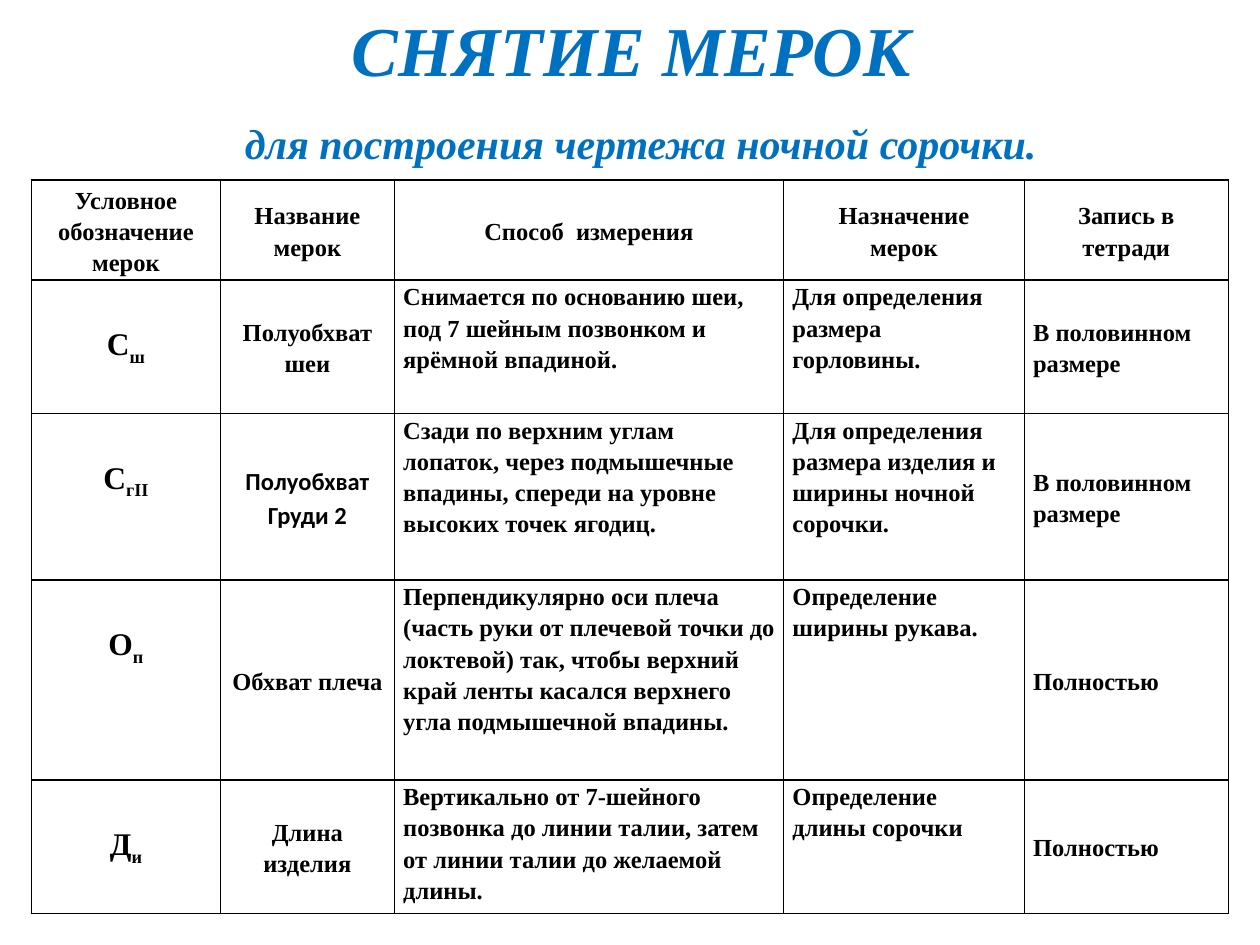
from dataclasses import dataclass

import pptx
import pptx.dml.color
import pptx.enum.text
import pptx.oxml
import pptx.oxml.ns
import pptx.util

RGBColor = pptx.dml.color.RGBColor
Inches = pptx.util.Inches
Pt = pptx.util.Pt
Align = pptx.enum.text.PP_ALIGN
Anchor = pptx.enum.text.MSO_ANCHOR

BLUE = RGBColor(0x00, 0x70, 0xC0)
BLACK = RGBColor(0, 0, 0)
SERIF = "Times New Roman"
WIDTH, HEIGHT = Inches(10), Inches(7.5)
COLS = (0.15, 0.138, 0.309, 0.191, 0.162)  # shares of the slide's width
ROWS = (3, 4, 5, 6, 4)  # grid units
UNIT = Inches(5.82) // sum(ROWS)


@dataclass
class Measure:
    sign: str
    index: str
    name: str
    method: str
    aim: str
    note: str
    face: str = SERIF


HEADS = ("Условное\nобозначение\nмерок", "Название\nмерок", "Способ  измерения",
         "Назначение\nмерок", "Запись в тетради")
MEASURES = (
    Measure("С", "ш", "Полуобхват\nшеи",
            "Снимается по основанию шеи, под 7 шейным позвонком и ярёмной впадиной.",
            "Для определения размера горловины.", "В половинном размере"),
    Measure("С", "гII", "Полуобхват\nГруди 2",
            "Сзади по верхним углам лопаток, через подмышечные впадины, "
            "спереди на уровне высоких точек ягодиц.",
            "Для определения размера изделия и ширины ночной сорочки.",
            "В половинном размере", "Calibri"),
    Measure("О", "п", "Обхват плеча",
            "Перпендикулярно оси плеча (часть руки от плечевой точки до локтевой) так, "
            "чтобы верхний край ленты касался верхнего угла подмышечной впадины.",
            "Определение ширины рукава.", "Полностью"),
    Measure("Д", "и", "Длина изделия",
            "Вертикально от 7-шейного позвонка до линии талии, "
            "затем от линии талии до желаемой длины.",
            "Определение длины сорочки", "Полностью"),
)


def style(font, size: float, color: RGBColor, face: str = SERIF,
          italic: bool = False) -> None:
    font.name, font.size, font.bold, font.italic = face, Pt(size), True, italic
    font.color.rgb = color


def place(shape, left: float, top: float, width: float, height: float) -> None:
    """Set the frame from shares of the slide's size."""
    shape.left, shape.width = int(left * WIDTH), int(width * WIDTH)
    shape.top, shape.height = int(top * HEIGHT), int(height * HEIGHT)


def head(shape, text: str, size: float, anchor: Anchor) -> None:
    frame = shape.text_frame
    frame.text = text
    frame.word_wrap = True
    frame.auto_size = pptx.enum.text.MSO_AUTO_SIZE.NONE
    frame.vertical_anchor = anchor
    frame.paragraphs[0].alignment = Align.CENTER
    style(frame.paragraphs[0].font, size, BLUE, italic=True)


def border(cell) -> None:
    props = cell._tc.get_or_add_tcPr()
    for side in "LRTB":
        props.append(pptx.oxml.parse_xml(
            f'<a:ln{side} {pptx.oxml.ns.nsdecls("a")} w="{Pt(1)}"><a:solidFill>'
            f'<a:srgbClr val="{BLACK}"/></a:solidFill></a:ln{side}>'))


def fill(cell, text: str, align: Align, anchor: Anchor, size: float = 14,
         face: str = SERIF) -> None:
    border(cell)
    cell.fill.background()
    cell.margin_left = cell.margin_right = Inches(0.07)
    cell.margin_top = cell.margin_bottom = 0
    cell.vertical_anchor = anchor
    cell.text = text
    for para in cell.text_frame.paragraphs:
        para.alignment, para.line_spacing = align, 1.15
        style(para.font, size, BLACK, face)


def symbol(cell, item: Measure) -> None:
    """Write the sign with its lowered index."""
    fill(cell, item.sign, Align.CENTER, Anchor.TOP, 18)
    cell.margin_top = Inches(0.33)
    run = cell.text_frame.paragraphs[0].add_run()
    run.text = item.index
    run._r.get_or_add_rPr().set("baseline", "-25000")


def main() -> None:
    deck = pptx.Presentation()
    deck.slide_width, deck.slide_height = WIDTH, HEIGHT
    slide = deck.slides.add_slide(deck.slide_layouts[5])

    title = slide.shapes.title
    place(title, 0.267, 0, 0.468, 0.103)
    head(title, "СНЯТИЕ МЕРОК", 40, Anchor.TOP)

    sub = slide.shapes.add_textbox(0, 0, 0, 0)
    place(sub, 0.1, 0.1, 0.817, 0.085)
    head(sub, "для построения чертежа ночной сорочки.", 24, Anchor.MIDDLE)
    sub.text_frame.margin_top = Inches(0.18)

    table = slide.shapes.add_table(
        len(ROWS), len(COLS), Inches(0.25), Inches(1.43),
        int(sum(COLS) * WIDTH), sum(ROWS) * UNIT).table
    table.first_row = table.horz_banding = False
    for col, share in zip(table.columns, COLS):
        col.width = int(share * WIDTH)
    for row, units in zip(table.rows, ROWS):
        row.height = units * UNIT

    for col, text in enumerate(HEADS):
        fill(table.cell(0, col), text, Align.CENTER, Anchor.MIDDLE)
    for row, item in enumerate(MEASURES, 1):
        cells = table.rows[row].cells
        symbol(cells[0], item)
        fill(cells[1], item.name, Align.CENTER, Anchor.MIDDLE, face=item.face)
        fill(cells[2], item.method, Align.LEFT, Anchor.TOP)
        fill(cells[3], item.aim, Align.LEFT, Anchor.TOP)
        fill(cells[4], item.note, Align.LEFT, Anchor.MIDDLE)

    deck.save("out.pptx")


if __name__ == "__main__":
    main()
